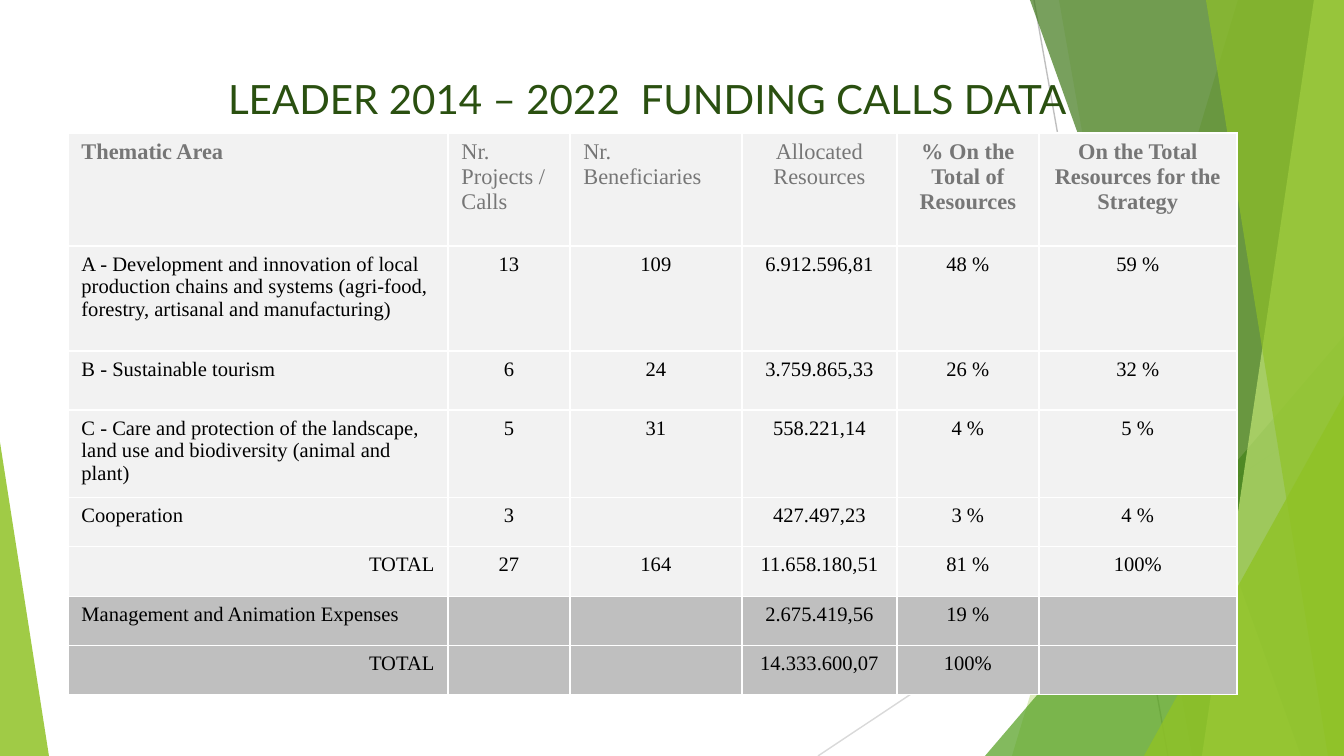
import dataclasses

import pptx
import pptx.dml.color
import pptx.enum.shapes
import pptx.enum.text
import pptx.oxml.ns
import pptx.util
from lxml import etree

SCALE = 914400 / 134.4
PAGE_WIDTH, PAGE_HEIGHT = 1344, 756
ALIGN = pptx.enum.text.PP_ALIGN


@dataclasses.dataclass(frozen=True)
class Theme:
    title_font: str = "Lato"
    body_font: str = "Times New Roman"
    title_size: float = 21.6
    header_size: float = 12
    body_size: float = 11
    title: str = "2A5010"
    header: str = "767676"
    body: str = "000000"
    light: str = "F2F2F2"
    dark: str = "BFBFBF"
    border: str = "FFFFFF"
    pale_line: str = "D9D9D9"
    lime: str = "90C226"
    green: str = "54A021"
    forest: str = "3F7819"
    mint: str = "C0E474"


THEME = Theme()

COLUMNS = [380, 122, 172, 155, 142, 198]
ROW_HEIGHTS = [113, 105, 59, 87, 49, 50, 49, 49]
HEADERS = ["Thematic Area", "Nr. Projects /Calls", "Nr. Beneficiaries",
           "Allocated Resources", "% On the Total of Resources",
           "On the Total Resources for the Strategy"]
ROWS = [
    ["A - Development and innovation of local production chains and systems "
     "(agri-food, forestry, artisanal and manufacturing)",
     "13", "109", "6.912.596,81", "48 %", "59 %"],
    ["B - Sustainable tourism", "6", "24", "3.759.865,33", "26 %", "32 %"],
    ["C - Care and protection of the landscape, land use and biodiversity "
     "(animal and plant)", "5", "31", "558.221,14", "4 %", "5 %"],
    ["Cooperation", "3", "", "427.497,23", "3 %", "4 %"],
    ["TOTAL", "27", "164", "11.658.180,51", "81 %", "100%"],
    ["Management and Animation Expenses", "", "", "2.675.419,56", "19 %", ""],
    ["TOTAL", "", "", "14.333.600,07", "100%", ""],
]
FIRST_DARK_ROW = 6


def px(length):
    return pptx.util.Emu(round(length * SCALE))


def rgb(color):
    return pptx.dml.color.RGBColor.from_string(color)


def add_child(parent, tag, **attributes):
    return etree.SubElement(parent, pptx.oxml.ns.qn(tag), attributes)


def write_text(frame, text, *, font, size, color, bold=False, align=ALIGN.LEFT):
    para = frame.paragraphs[0]
    para.alignment = align
    if not text:
        add_child(para._p, "a:endParaRPr", sz=str(round(size * 100)))
        return
    span = para.add_run()
    span.text = text
    span.font.name = font
    span.font.size = pptx.util.Pt(size)
    span.font.bold = bold
    span.font.color.rgb = rgb(color)


def paint(shape, color, opacity):
    shape.shadow.inherit = False
    shape.line.fill.background()
    shape.fill.solid()
    shape.fill.fore_color.rgb = rgb(color)
    tint = shape._element.spPr.find(".//" + pptx.oxml.ns.qn("a:srgbClr"))
    add_child(tint, "a:alpha", val=str(opacity * 1000))


def add_thin_line(page, start, end, color):
    line = page.shapes.add_connector(
        pptx.enum.shapes.MSO_CONNECTOR.STRAIGHT,
        *[px(value) for value in (*start, *end)])
    line.line.color.rgb = rgb(color)
    line.line.width = pptx.util.Pt(0.75)
    add_child(line._element.spPr, "a:effectLst")


def add_facet(page, box, top_x, bottom_x, color, opacity):
    left, top, width, height = box
    right, bottom = left + width, top + height
    builder = page.shapes.build_freeform(left + top_x, top, scale=SCALE)
    builder.add_line_segments(
        [(right, top), (right, bottom), (left + bottom_x, bottom)], close=True)
    paint(builder.convert_to_shape(), color, opacity)


def add_corner(page, box, apex, color, opacity):
    corner = page.shapes.add_shape(
        pptx.enum.shapes.MSO_SHAPE.ISOSCELES_TRIANGLE,
        *[px(value) for value in box])
    corner.adjustments[0] = apex
    paint(corner, color, opacity)


def add_backdrop(page, box):
    left, top, width, height = box
    right, bottom = left + width, top + height
    add_thin_line(page, (left + 1034, top), (left + 1168, bottom), THEME.dark)
    add_thin_line(page, (right, top + 406), (left + 818, bottom), THEME.pale_line)
    add_facet(page, box, 1238, 1012, THEME.lime, 30)
    add_facet(page, box, 1059, 1192, THEME.lime, 20)
    add_corner(page, (right - 359, bottom - 420, 359, 420), 1, THEME.green, 72)
    add_facet(page, box, 1030, 1301, THEME.forest, 70)
    add_facet(page, box, 1314, 1202, THEME.mint, 70)
    add_facet(page, box, 1206, 1328, THEME.lime, 65)
    add_corner(page, (right - 200, bottom - 361, 200, 361), 1, THEME.lime, 80)
    add_corner(page, (left, bottom - 314, 49, 314), 0, THEME.lime, 85)


def add_title(page, box):
    frame = page.shapes.add_textbox(*[px(value) for value in box]).text_frame
    frame.word_wrap = True
    frame.vertical_anchor = pptx.enum.text.MSO_ANCHOR.MIDDLE
    frame.margin_top = frame.margin_bottom = 0
    write_text(frame, "LEADER 2014 – 2022  FUNDING CALLS DATA",
               font=THEME.title_font, size=THEME.title_size,
               color=THEME.title, align=ALIGN.CENTER)


def style_cell(cell, color):
    cell.fill.solid()
    cell.fill.fore_color.rgb = rgb(color)
    properties = cell._tc.get_or_add_tcPr()
    for position, side in enumerate(("a:lnL", "a:lnR", "a:lnT", "a:lnB")):
        edge = add_child(properties, side, w="12700")
        add_child(add_child(edge, "a:solidFill"), "a:srgbClr", val=THEME.border)
        properties.insert(position, edge)


def body_alignment(column, text):
    if column:
        return ALIGN.CENTER
    return ALIGN.RIGHT if text == "TOTAL" else ALIGN.LEFT


def add_funding_table(page, box):
    table = page.shapes.add_table(
        len(ROW_HEIGHTS), len(COLUMNS), *[px(value) for value in box]).table
    table.first_row = table.horz_banding = False
    for column, width in zip(table.columns, COLUMNS):
        column.width = px(width)
    for row, height in zip(table.rows, ROW_HEIGHTS):
        row.height = px(height)
    for column, text in enumerate(HEADERS):
        cell = table.cell(0, column)
        style_cell(cell, THEME.light)
        write_text(cell.text_frame, text, font=THEME.body_font,
                   size=THEME.header_size, color=THEME.header,
                   bold=column in (0, 4, 5),
                   align=ALIGN.CENTER if column > 2 else ALIGN.LEFT)
    for row, texts in enumerate(ROWS, start=1):
        for column, text in enumerate(texts):
            cell = table.cell(row, column)
            style_cell(cell, THEME.dark if row >= FIRST_DARK_ROW else THEME.light)
            write_text(cell.text_frame, text, font=THEME.body_font,
                       size=THEME.body_size, color=THEME.body,
                       align=body_alignment(column, text))


def main():
    deck = pptx.Presentation()
    deck.slide_width, deck.slide_height = px(PAGE_WIDTH), px(PAGE_HEIGHT)
    page = deck.slides.add_slide(deck.slide_layouts[6])
    add_backdrop(page, (0, 0, PAGE_WIDTH, PAGE_HEIGHT))
    add_title(page, (67, 74, 1161, 48))
    add_funding_table(page, (68, 133, sum(COLUMNS), sum(ROW_HEIGHTS)))
    deck.save("out.pptx")


if __name__ == "__main__":
    main()
